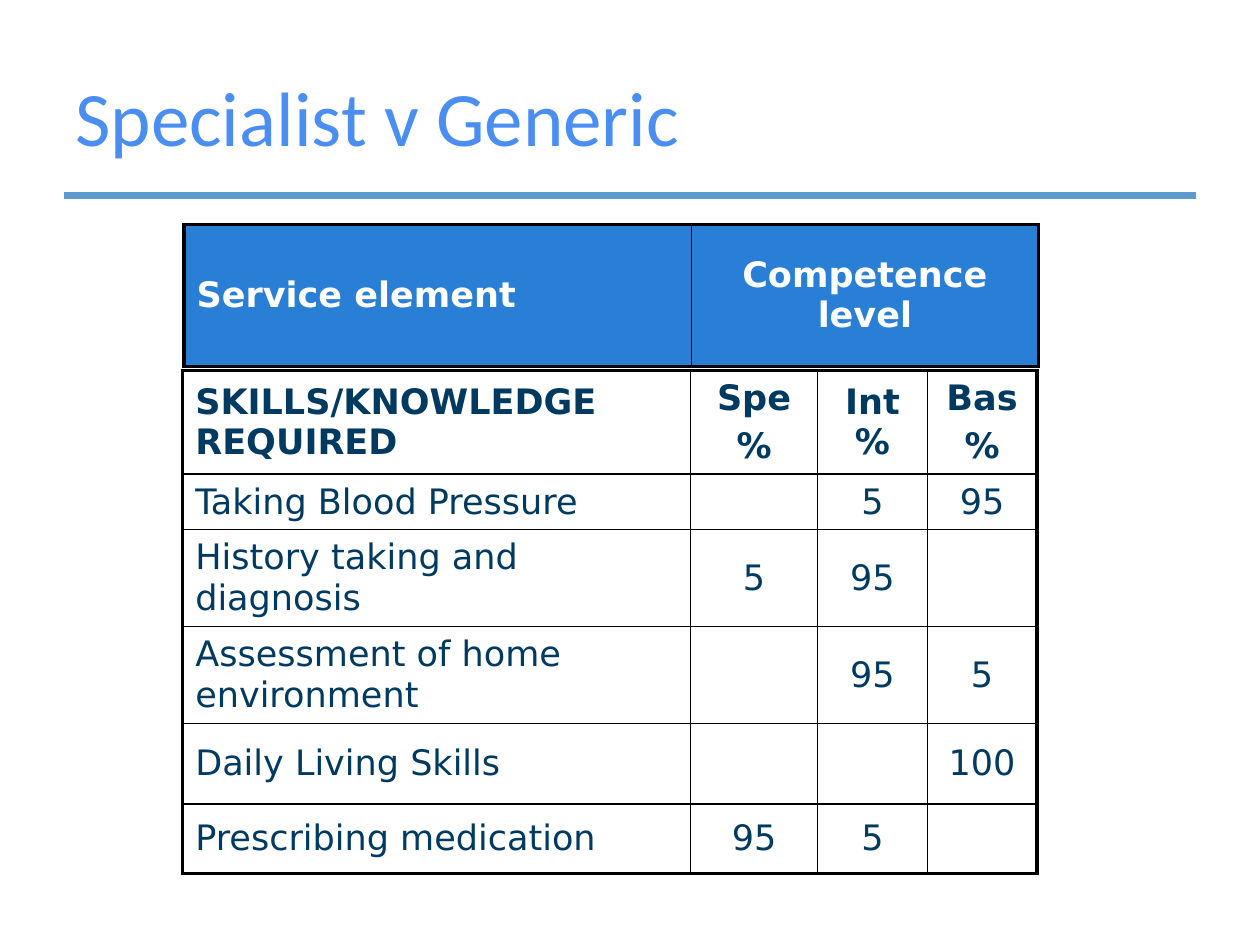
from lxml import etree
from pptx import Presentation
from pptx.dml.color import RGBColor
from pptx.enum.shapes import MSO_CONNECTOR
from pptx.enum.text import MSO_ANCHOR, PP_ALIGN
from pptx.oxml import parse_xml
from pptx.oxml.ns import nsdecls, qn
from pptx.util import Inches, Pt

TITLE_BLUE = RGBColor(0x4A, 0x8E, 0xF2)
RULE_BLUE = RGBColor(0x5D, 0x9A, 0xCF)
HEADER_BLUE = RGBColor(0x29, 0x7F, 0xD5)
NAVY = RGBColor(0x01, 0x3A, 0x61)
WHITE = RGBColor(0xFF, 0xFF, 0xFF)

HEADING = [["Service element", "Competence level"]]
SKILLS = [
    ["SKILLS/KNOWLEDGE REQUIRED", "Spe\n%", "Int%", "Bas\n%"],
    ["Taking Blood Pressure", "", "5", "95"],
    ["History taking and diagnosis", "5", "95", ""],
    ["Assessment of home environment", "", "95", "5"],
    ["Daily Living Skills", "", "", "100"],
    ["Prescribing medication", "95", "5", ""],
]


class SlideBuilder:
    title_font = "Calibri"
    table_font = "DejaVu Sans"
    table_size = Pt(20)
    outer_border = Pt(2.25)
    inner_border = Pt(1)

    def __init__(self, page):
        self.page = page

    def rule(self, left, right, top):
        line = self.page.shapes.add_connector(
            MSO_CONNECTOR.STRAIGHT, Inches(left), Inches(top), Inches(right), Inches(top))
        line.line.color.rgb = RULE_BLUE
        line.line.width = Pt(4)
        etree.SubElement(line._element.spPr, qn("a:effectLst"))

    def title(self, text, left, top, width, height):
        box = self.page.shapes.add_textbox(
            Inches(left), Inches(top), Inches(width), Inches(height))
        frame = box.text_frame
        frame.word_wrap = True
        frame.vertical_anchor = MSO_ANCHOR.MIDDLE
        para = frame.paragraphs[0]
        para.text = text
        self.style(para, self.title_font, Pt(44), TITLE_BLUE)

    def style(self, para, name, size, color, bold=False):
        font = para.font
        font.name, font.size, font.bold = name, size, bold
        font.color.rgb = color

    def table(self, rows, left, top, widths, heights, color, fill=None):
        """Add a table with a bold first row and a heavier outer frame."""
        frame = self.page.shapes.add_table(
            len(rows), len(widths), Inches(left), Inches(top),
            Inches(sum(widths)), Inches(sum(heights)))
        table = frame.table
        table.first_row = table.horz_banding = False
        for column, width in zip(table.columns, widths):
            column.width = Inches(width)
        for row, height in zip(table.rows, heights):
            row.height = Inches(height)
        last_row, last_column = len(rows) - 1, len(widths) - 1
        for r, texts in enumerate(rows):
            for c, text in enumerate(texts):
                cell = table.cell(r, c)
                self.borders(cell, L=c == 0, R=c == last_column, T=r == 0, B=r == last_row)
                if fill is None:
                    cell.fill.background()
                else:
                    cell.fill.solid()
                    cell.fill.fore_color.rgb = fill
                self.cell_text(cell, text, color, bold=r == 0, centred=c > 0)

    def borders(self, cell, **outer_sides):
        """Draw each side of a cell, heavier where it lies on the frame."""
        properties = cell._tc.get_or_add_tcPr()
        for side, is_outer in outer_sides.items():
            width = self.outer_border if is_outer else self.inner_border
            properties.append(parse_xml(
                f'<a:ln{side} {nsdecls("a")} w="{width}"><a:solidFill>'
                f'<a:srgbClr val="000000"/></a:solidFill></a:ln{side}>'))

    def cell_text(self, cell, text, color, bold, centred):
        cell.vertical_anchor = MSO_ANCHOR.MIDDLE
        cell.margin_left = cell.margin_right = Inches(0.1)
        cell.margin_top = cell.margin_bottom = Inches(0.05)
        cell.text = text
        for index, para in enumerate(cell.text_frame.paragraphs):
            para.alignment = PP_ALIGN.CENTER if centred else PP_ALIGN.LEFT
            if index:
                para.space_before = Pt(4)
            self.style(para, self.table_font, self.table_size, color, bold)


def main():
    deck = Presentation()
    deck.slide_width, deck.slide_height = Inches(10), Inches(7.5)
    builder = SlideBuilder(deck.slides.add_slide(deck.slide_layouts[6]))
    builder.rule(0.51, 9.49, 1.55)
    builder.title("Specialist v Generic", 0.5, 0.29, 9.22, 1.25)
    builder.table(HEADING, 1.46, 1.78, [4.03, 2.75], [1.13], WHITE, HEADER_BLUE)
    builder.table(SKILLS, 1.45, 2.94, [4.03, 1.01, 0.87, 0.87],
                  [0.82, 0.44, 0.77, 0.77, 0.64, 0.55], NAVY)
    deck.save("out.pptx")


if __name__ == "__main__":
    main()
